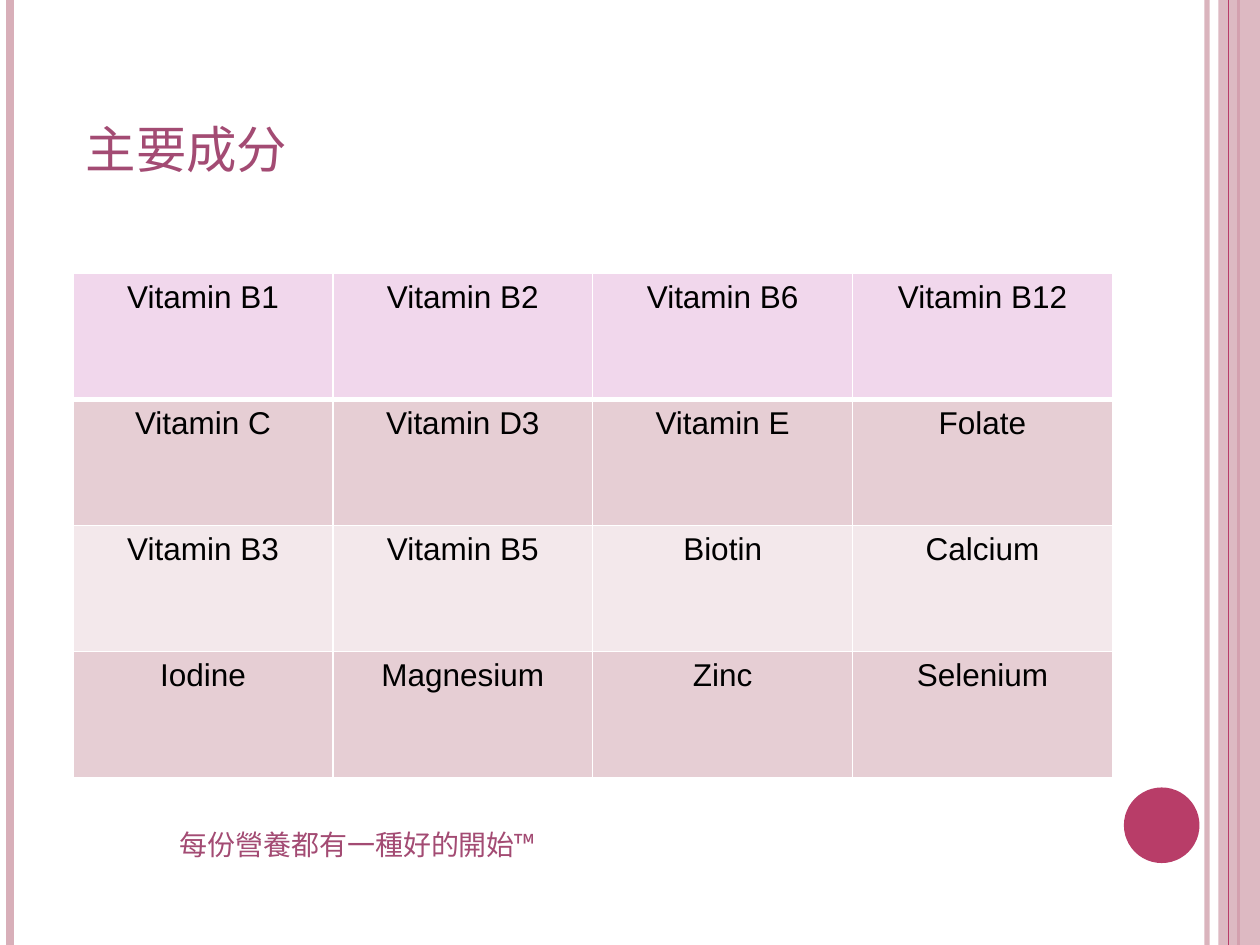
import pptx
import pptx.util
import pptx.dml.color
import pptx.enum.shapes
import pptx.enum.text
import pptx.oxml
import pptx.oxml.ns
from pptx.util import Inches, Pt

# Content
TITLE = "主要成分"
SLOGAN = "每份營養都有一種好的開始™"
INGREDIENTS = [
    ("Vitamin B1", "Vitamin B2", "Vitamin B6", "Vitamin B12"),
    ("Vitamin C", "Vitamin D3", "Vitamin E", "Folate"),
    ("Vitamin B3", "Vitamin B5", "Biotin", "Calcium"),
    ("Iodine", "Magnesium", "Zinc", "Selenium"),
]

# Look
WIDTH, HEIGHT = 10, 7.5
PLUM, ROSE, PINK, WHITE, BLACK = "A34B73", "B83D68", "D8AFB9", "FFFFFF", "000000"
ROW_FILLS = ["F1D7EC", "E6CED4", "F3E8EB", "E6CED4"]
CHINESE, LATIN = "Noto Sans CJK SC", "Arial"
LEFT = 0.58


def rgb(code):
    return pptx.dml.color.RGBColor.from_string(code)


def add_xml(parent, tag, **attributes):
    element = parent.makeelement(pptx.oxml.ns.qn(tag), attributes)
    parent.append(element)
    return element


def set_opacity(fill_owner, percent):
    for color in fill_owner.iter(pptx.oxml.ns.qn("a:srgbClr")):
        add_xml(color, "a:alpha", val=str(percent * 1000))


def write(paragraph, text, size, face, color):
    run = paragraph.add_run()
    run.text = text
    run.font.size, run.font.name, run.font.bold = Pt(size), face, False
    run.font.color.rgb = rgb(color)
    add_xml(run.font._element, "a:ea", typeface=face)
    return run


def add_stripe(x, color, weight, opacity=100):
    stripe = slide.shapes.add_connector(
        pptx.enum.shapes.MSO_CONNECTOR.STRAIGHT,
        Inches(x), 0, Inches(x), Inches(HEIGHT))
    stripe.line.color.rgb = rgb(color)
    stripe.line.width = Pt(weight)
    if opacity < 100:
        set_opacity(stripe._element.spPr, opacity)
    add_xml(stripe._element.spPr, "a:effectLst")


def add_plain_shape(kind, color, *box):
    shape = slide.shapes.add_shape(kind, *map(Inches, box))
    shape.shadow.inherit = False
    shape.fill.solid()
    shape.fill.fore_color.rgb = rgb(color)
    shape.line.fill.background()
    return shape


def set_borders(cell, bottom_weight):
    properties = cell._tc.get_or_add_tcPr()
    weights = {"a:lnL": 1, "a:lnR": 1, "a:lnT": 1, "a:lnB": bottom_weight}
    for index, (side, weight) in enumerate(weights.items()):
        border = properties.makeelement(
            pptx.oxml.ns.qn(side), {"w": str(Pt(weight))})
        add_xml(add_xml(border, "a:solidFill"), "a:srgbClr", val=WHITE)
        properties.insert(index, border)


deck = pptx.Presentation()
deck.slide_width, deck.slide_height = Inches(WIDTH), Inches(HEIGHT)
slide = deck.slides.add_slide(deck.slide_layouts[5])

# Side stripes, band and disc
SHAPES = pptx.enum.shapes.MSO_SHAPE
add_stripe(9.58, PINK, 3, 93)
add_stripe(0.08, PINK, 4.5)
add_stripe(9.83, ROSE, 1.5)
band = add_plain_shape(SHAPES.RECTANGLE, PINK, 9.67, 0, 0.33, HEIGHT)
set_opacity(band._element.spPr, 87)
add_stripe(9.75, ROSE, 0.75)
add_plain_shape(SHAPES.OVAL, ROSE, 8.92, 6.25, 0.6, 0.6)

# Title
title = slide.shapes.title
title.left, title.top = Inches(LEFT), Inches(0.67)
title.width, title.height = Inches(6.75), Inches(0.82)
title.text_frame.vertical_anchor = pptx.enum.text.MSO_ANCHOR.BOTTOM
heading = title.text_frame.paragraphs[0]
heading.alignment = pptx.enum.text.PP_ALIGN.LEFT
write(heading, TITLE, 36, CHINESE, PLUM).font._element.set("cap", "small")

# Slogan
slogan = slide.shapes.add_textbox(
    Inches(1.33), Inches(6.52), Inches(6.75), Inches(0.38)).text_frame
slogan.word_wrap = True
slogan.paragraphs[0].space_before = Pt(6)
write(slogan.paragraphs[0], SLOGAN, 16, CHINESE, PLUM)

# Ingredient table
table = slide.shapes.add_table(
    len(INGREDIENTS), len(INGREDIENTS[0]),
    Inches(LEFT), Inches(2.17), Inches(8.25), Inches(4)).table
for r, names in enumerate(INGREDIENTS):
    for c, name in enumerate(names):
        cell = table.cell(r, c)
        cell.fill.solid()
        cell.fill.fore_color.rgb = rgb(ROW_FILLS[r])
        set_borders(cell, 3 if r == 0 else 1)
        label = cell.text_frame.paragraphs[0]
        label.alignment = pptx.enum.text.PP_ALIGN.CENTER
        write(label, name, 18, LATIN, BLACK)

deck.save("out.pptx")
